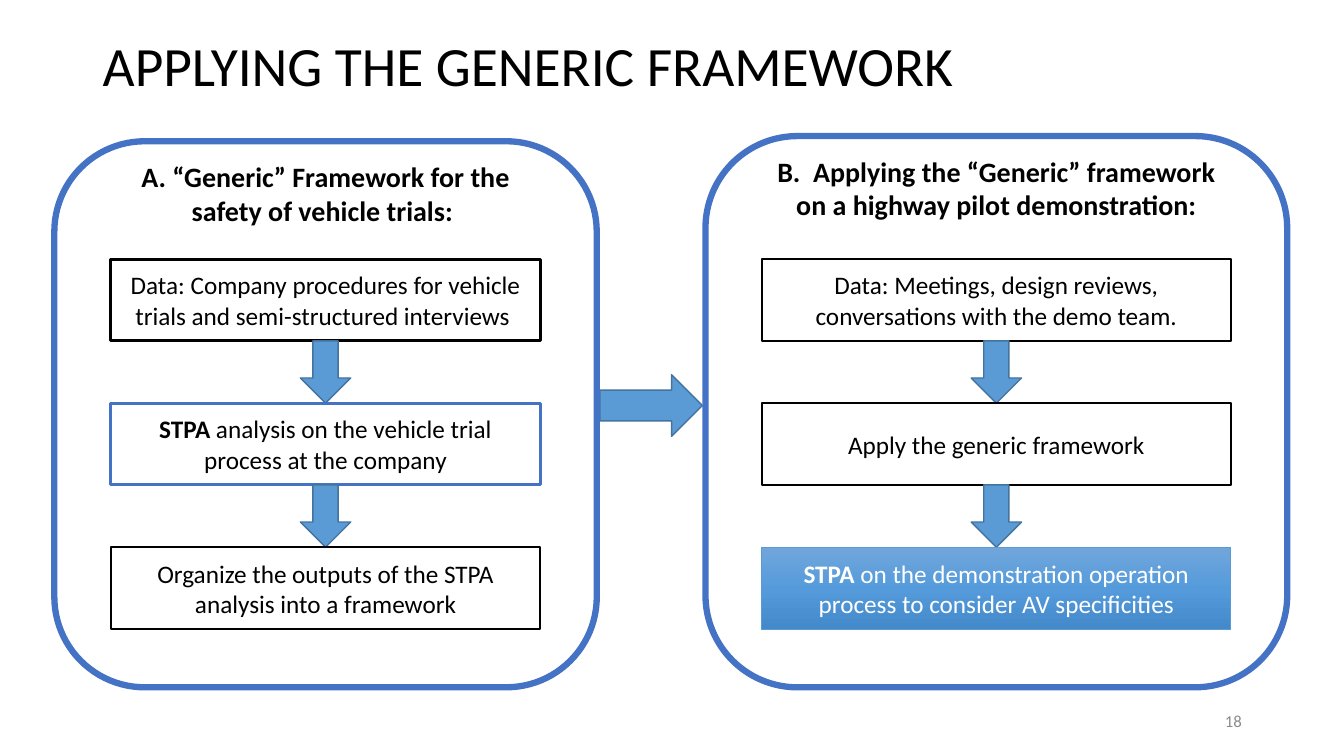
from copy import deepcopy
from dataclasses import dataclass

from pptx import Presentation
from pptx import util as u
from pptx.dml.color import RGBColor
from pptx.enum import shapes, text


@dataclass(frozen=True)
class Theme:
    font: str = "Calibri"
    ink: str = "000000"
    paper: str = "FFFFFF"
    muted: str = "8C8C8C"
    frame: str = "4472C4"
    arrow: str = "5B9BD5"
    arrow_edge: str = "43739E"
    gradient: tuple = ((0, "71A6DB"), (0.5, "559BDB"), (1, "448ACA"))
    title_size: float = 39.6
    heading_size: int = 20
    step_size: int = 18
    number_size: int = 12


THEME = Theme()
FORM = shapes.MSO_SHAPE
ALIGN = text.PP_ALIGN


@dataclass(frozen=True)
class Box:
    left: float
    top: float
    width: float
    height: float

    @property
    def right(self):
        return self.left + self.width

    @property
    def bottom(self):
        return self.top + self.height

    def lengths(self):
        return [u.Cm(v) for v in (self.left, self.top, self.width, self.height)]


@dataclass(frozen=True)
class Step:
    words: str
    lead: str = ""
    edge: str = THEME.ink
    weight: float = 1.5
    highlighted: bool = False


def rgb(value):
    return RGBColor.from_string(value)


def write(holder, words, size, color=THEME.ink, align=ALIGN.CENTER, bold=None, lead=""):
    frame = holder.text_frame
    frame.word_wrap = True
    frame.vertical_anchor = text.MSO_ANCHOR.MIDDLE
    paragraph = frame.paragraphs[0]
    paragraph.alignment = align
    font = paragraph.font
    font.name, font.size, font.bold = THEME.font, u.Pt(size), bold
    font.color.rgb = rgb(color)
    if lead:
        lead_run = paragraph.add_run()
        lead_run.text = lead
        lead_run.font.bold = True
    paragraph.add_run().text = words
    for run in paragraph.runs:
        run.font.color.rgb = rgb(color)
    return paragraph


def add_label(slide, box, words, size, **style):
    return write(slide.shapes.add_textbox(*box.lengths()), words, size, **style)


def add_form(slide, form, box, fill, edge, weight):
    shape = slide.shapes.add_shape(form, *box.lengths())
    shape.shadow.inherit = False
    if fill:
        shape.fill.solid()
        shape.fill.fore_color.rgb = rgb(fill)
    else:
        shape.fill.background()
    shape.line.color.rgb = rgb(edge)
    shape.line.width = u.Pt(weight)
    return shape


def add_arrow(slide, form, box):
    add_form(slide, form, box, THEME.arrow, THEME.arrow_edge, 1)


def shade(shape):
    shape.fill.gradient()
    shape.fill.gradient_angle = 270
    stop_list = shape.element.spPr.find(".//{*}gsLst")
    stop_list.insert(1, deepcopy(stop_list[0]))
    for stop, (position, color) in zip(shape.fill.gradient_stops, THEME.gradient):
        stop.position = position
        stop.color.rgb = rgb(color)


def add_step(slide, box, step):
    shape = add_form(slide, FORM.RECTANGLE, box, THEME.paper, step.edge, step.weight)
    if step.highlighted:
        shade(shape)
    color = THEME.paper if step.highlighted else THEME.ink
    write(shape, step.words, THEME.step_size, color=color, lead=step.lead)


def add_panel(slide, box, heading, heading_gap, steps):
    inset, step_height, pitch = 1.42, 2.06, 3.63
    arrow_width = 1.27
    inner_left, inner_width = box.left + inset, box.width - 2 * inset
    first_top = box.bottom - 10.79
    heading_top = box.top + heading_gap
    heading_bottom = first_top - 0.63

    add_form(slide, FORM.ROUNDED_RECTANGLE, box, None, THEME.frame, 4.5)
    heading_box = Box(inner_left, heading_top, inner_width, heading_bottom - heading_top)
    add_label(slide, heading_box, heading, THEME.heading_size, bold=True)
    for index, step in enumerate(steps):
        step_box = Box(inner_left, first_top + index * pitch, inner_width, step_height)
        add_step(slide, step_box, step)
        if index < len(steps) - 1:
            arrow_left = box.left + (box.width - arrow_width) / 2
            add_arrow(slide, FORM.DOWN_ARROW,
                      Box(arrow_left, step_box.bottom, arrow_width, pitch - step_height))


def add_panel_link(slide, source, target):
    gap, height = 0.08, 1.55
    left = source.right + gap
    middle = (source.top + source.bottom) / 2 - 0.22
    add_arrow(slide, FORM.RIGHT_ARROW,
              Box(left, middle - height / 2, target.left - gap - left, height))


def add_framework_slide(deck):
    slide = deck.slides.add_slide(deck.slide_layouts[6])
    generic = Box(1.37, 3.56, 13.67, 13.76)
    pilot = Box(17.78, 3.43, 14.66, 13.89)

    title = add_label(slide, Box(2.34, 1.02, 29.21, 1.42), "APPLYING THE GENERIC FRAMEWORK",
                      THEME.title_size, align=ALIGN.LEFT)
    title.line_spacing = 0.9
    add_panel_link(slide, generic, pilot)
    add_panel(slide, generic, "A. “Generic” Framework for the safety of vehicle trials: ", 0.28, [
        Step("Data: Company procedures for vehicle trials and semi-structured interviews ",
             weight=2.25),
        Step(" analysis on the vehicle trial process at the company", lead="STPA",
             edge=THEME.frame, weight=2.25),
        Step("Organize the outputs of the STPA analysis into a framework"),
    ])
    add_panel(slide, pilot,
              "B.  Applying the “Generic” framework on a highway pilot demonstration:", 0.13, [
                  Step("Data: Meetings, design reviews, conversations with the demo team."),
                  Step("Apply the generic framework"),
                  Step(" on the demonstration operation process to consider AV specificities",
                       lead="STPA", edge=THEME.arrow, weight=0.5, highlighted=True),
              ])
    add_label(slide, Box(23.93, 17.65, 7.62, 1.02), "18", THEME.number_size,
              color=THEME.muted, align=ALIGN.RIGHT)


def main():
    deck = Presentation()
    deck.slide_width, deck.slide_height = u.Cm(33.87), u.Cm(19.05)
    add_framework_slide(deck)
    deck.save("out.pptx")


if __name__ == "__main__":
    main()
